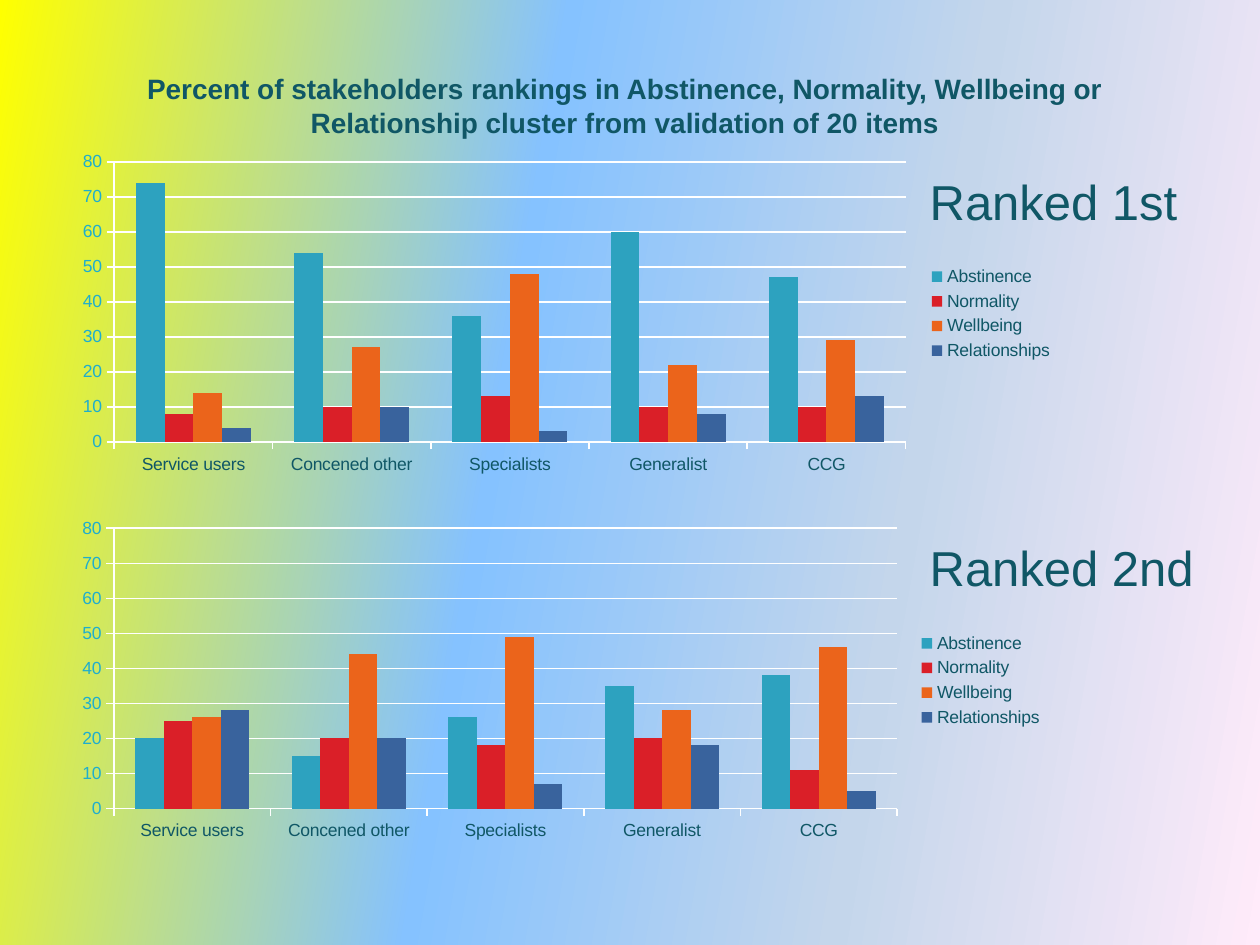
from dataclasses import dataclass

from lxml.etree import SubElement
from pptx import Presentation
from pptx.chart.data import CategoryChartData
from pptx.dml.color import RGBColor
from pptx.enum.chart import XL_CHART_TYPE as ChartType
from pptx.enum.chart import XL_LEGEND_POSITION as LegendPosition
from pptx.enum.chart import XL_TICK_MARK as TickMark
from pptx.enum.text import MSO_AUTO_SIZE as AutoSize
from pptx.enum.text import PP_ALIGN as Align
from pptx.oxml.ns import qn
from pptx.util import Inches, Pt


@dataclass(frozen=True)
class Theme:
    font: str = "Arial"
    ink: str = "105766"
    scale: str = "1FAECD"
    rule: str = "FFFFFF"
    clusters: tuple = ("2DA2BF", "DA1F28", "EB641B", "39639D")
    # position %, colour, opacity %
    backdrop: tuple = ((0, "FFFF00", 66), (40, "85C2FF", 100),
                       (70, "C4D6EB", 100), (100, "FFEBFA", 100))
    backdrop_angle: int = 10
    title_size: int = 16
    rank_size: int = 28
    chart_size: int = 10


CLUSTERS = ("Abstinence", "Normality", "Wellbeing", "Relationships")
STAKEHOLDERS = ("Service users", "Concened other", "Specialists", "Generalist", "CCG")
FIRST_RANKS = ((74, 54, 36, 60, 47), (8, 10, 13, 10, 10),
               (14, 27, 48, 22, 29), (4, 10, 3, 8, 13))
SECOND_RANKS = ((20, 15, 26, 35, 38), (25, 20, 18, 20, 11),
                (26, 44, 49, 28, 46), (28, 20, 7, 18, 5))


class RankingSlide:
    """Places elements on a grid of 100 columns by 75 rows."""

    COLUMNS, ROWS = 100, 75

    def __init__(self, deck, theme):
        self.theme = theme
        self.slide = deck.slides.add_slide(deck.slide_layouts[6])
        self.column = deck.slide_width / self.COLUMNS
        self.row = deck.slide_height / self.ROWS

    def area(self, left, top, width, height):
        return (round(left * self.column), round(top * self.row),
                round(width * self.column), round(height * self.row))

    def style_font(self, font, size, color, bold=False):
        font.name, font.size, font.bold = self.theme.font, Pt(size), bold
        font.color.rgb = RGBColor.from_string(color)

    def rule_line(self, line):
        line.color.rgb = RGBColor.from_string(self.theme.rule)
        line.width = Pt(1)

    def backdrop(self):
        self.slide.background.fill.gradient()
        gradient = next(self.slide.element.iter(qn("a:gradFill")))
        stops = gradient.find(qn("a:gsLst"))
        for stop in list(stops):
            stops.remove(stop)
        for position, color, opacity in self.theme.backdrop:
            stop = SubElement(stops, qn("a:gs"), pos=str(position * 1000))
            tint = SubElement(stop, qn("a:srgbClr"), val=color)
            if opacity < 100:
                SubElement(tint, qn("a:alpha"), val=str(opacity * 1000))
        gradient.find(qn("a:lin")).set("ang", str(self.theme.backdrop_angle * 60000))

    def text(self, words, area, size, bold=False, align=Align.LEFT, wrap=False):
        frame = self.slide.shapes.add_textbox(*self.area(*area)).text_frame
        frame.word_wrap = wrap
        frame.auto_size = AutoSize.SHAPE_TO_FIT_TEXT
        paragraph = frame.paragraphs[0]
        paragraph.alignment = align
        run = paragraph.add_run()
        run.text = words
        self.style_font(run.font, size, self.theme.ink, bold)

    def ranking_chart(self, ranks, area):
        theme = self.theme
        data = CategoryChartData()
        data.categories = STAKEHOLDERS
        for cluster, percents in zip(CLUSTERS, ranks):
            data.add_series(cluster, percents)
        chart = self.slide.shapes.add_chart(
            ChartType.COLUMN_CLUSTERED, *self.area(*area), data).chart
        chart.has_title = False
        self.style_font(chart.font, theme.chart_size, theme.scale)

        plot = chart.plots[0]
        plot.vary_by_categories = False
        plot.gap_width, plot.overlap = 150, 0
        for series, color in zip(plot.series, theme.clusters):
            series.format.fill.solid()
            series.format.fill.fore_color.rgb = RGBColor.from_string(color)

        for axis, color in ((chart.category_axis, theme.ink),
                            (chart.value_axis, theme.scale)):
            axis.major_tick_mark = TickMark.OUTSIDE
            axis.minor_tick_mark = TickMark.NONE
            self.rule_line(axis.format.line)
            self.style_font(axis.tick_labels.font, theme.chart_size, color)
        scale = chart.value_axis
        scale.minimum_scale, scale.maximum_scale, scale.major_unit = 0, 80, 10
        scale.has_major_gridlines = True
        self.rule_line(scale.major_gridlines.format.line)

        chart.has_legend = True
        chart.legend.position = LegendPosition.RIGHT
        chart.legend.include_in_layout = False
        self.style_font(chart.legend.font, theme.chart_size, theme.ink)
        self.fix_plot_area(chart)

    @staticmethod
    def fix_plot_area(chart):
        """Pin the inner plot area to shares of the chart's size."""
        plot_area = next(chart.element.iter(qn("c:plotArea")))
        layout = plot_area.find(qn("c:layout"))
        if layout is None:
            layout = SubElement(plot_area, qn("c:layout"))
            plot_area.insert(0, layout)
        manual = SubElement(layout, qn("c:manualLayout"))
        for tag, setting in (("layoutTarget", "inner"), ("xMode", "edge"), ("yMode", "edge"),
                             ("x", "0.05"), ("y", "0.05"), ("w", "0.79"), ("h", "0.83")):
            SubElement(manual, qn(f"c:{tag}"), val=setting)


def main():
    deck = Presentation()
    deck.slide_width, deck.slide_height = Inches(10), Inches(7.5)
    theme = Theme()
    page = RankingSlide(deck, theme)
    page.backdrop()

    margin, first_top, pitch = 5.1, 11.5, 29.1
    panels = (("Ranked 1st", FIRST_RANKS, 79.5, 21.9),
              ("Ranked 2nd", SECOND_RANKS, 78.7, 23.2))
    for index, (rank, ranks, chart_width, label_width) in enumerate(panels):
        top = first_top + index * pitch
        page.ranking_chart(ranks, (margin, top, chart_width, 26.8))
        page.text(rank, (72.8, top + 1.6, label_width, 5.7), theme.rank_size)
    page.text("Percent of stakeholders rankings in Abstinence, Normality, Wellbeing or "
              "Relationship cluster from validation of 20 items",
              (margin, 5.2, 89, 6.4), theme.title_size,
              bold=True, align=Align.CENTER, wrap=True)
    deck.save("out.pptx")


if __name__ == "__main__":
    main()
